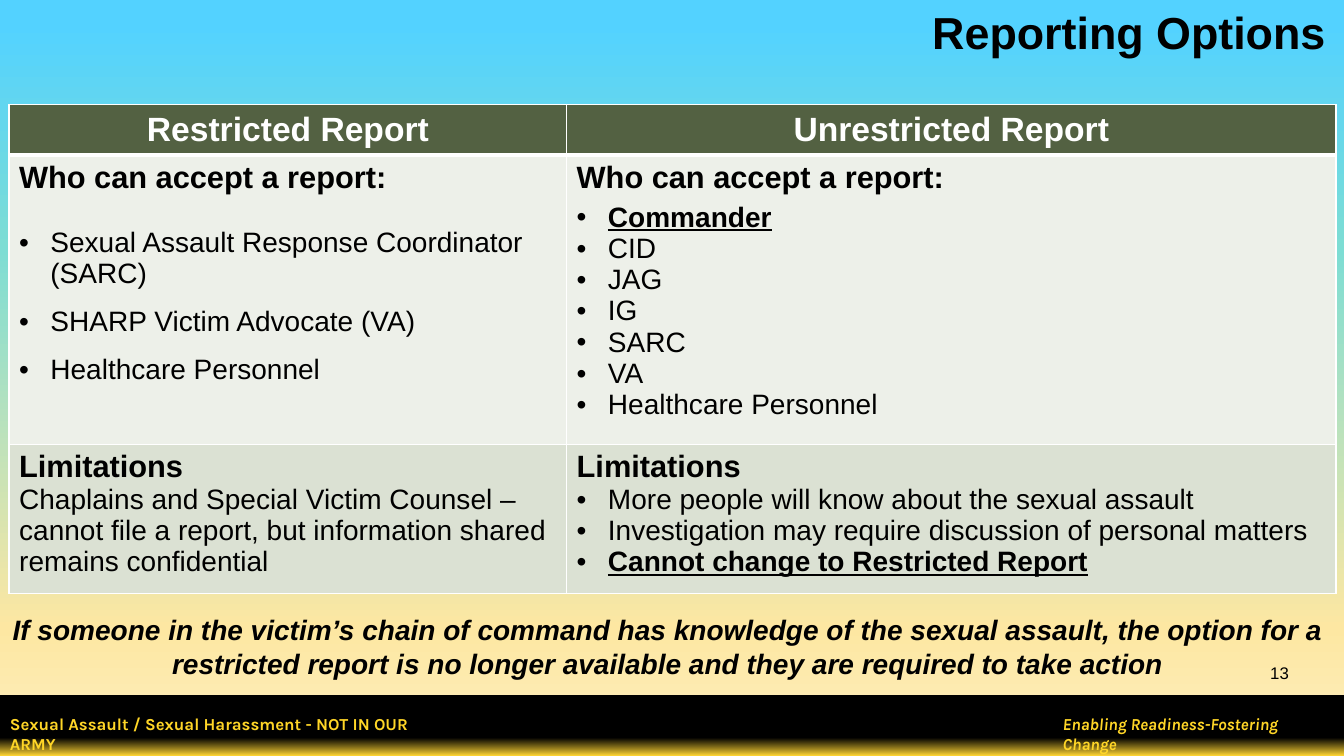
from lxml import etree
from pptx import Presentation
from pptx.dml.color import RGBColor
from pptx.enum.shapes import MSO_SHAPE
from pptx.enum.text import MSO_ANCHOR, PP_ALIGN
from pptx.oxml.ns import qn
from pptx.util import Inches, Pt

RECT = MSO_SHAPE.RECTANGLE
MIDDLE = MSO_ANCHOR.MIDDLE
LEFT, CENTER, RIGHT = PP_ALIGN.LEFT, PP_ALIGN.CENTER, PP_ALIGN.RIGHT

COLORS = {
    "black": "000000", "white": "FFFFFF", "gold": "FFD627", "glow": "FFD531",
    "olive": "536142", "pale": "EDF0E9", "sage": "DBE1D3",
    "sky": "53D2FF", "aqua": "7DDDD4", "sand": "FDE7A2", "cream": "FDEFC1",
}
SKY = [(0, "sky"), (3, "sky"), (33, "aqua"), (83, "sand"), (100, "cream")]
BAND = [(70, "black"), (100, "glow")]

HEADS = ["Restricted Report", "Unrestricted Report"]
WHO = "Who can accept a report:"
LIMITS = "Limitations"
BODY = [
    [
        {"head": WHO, "first": 23, "gap": 6, "items": [
            "Sexual Assault Response Coordinator (SARC)",
            "SHARP Victim Advocate (VA)",
            "Healthcare Personnel",
        ]},
        {"head": WHO, "first": 5, "items": [
            "Commander", "CID", "JAG", "IG", "SARC", "VA",
            "Healthcare Personnel",
        ]},
    ],
    [
        {"head": LIMITS, "plain": True, "items": [
            "Chaplains and Special Victim Counsel – cannot file a report, "
            "but information shared remains confidential",
        ]},
        {"head": LIMITS, "items": [
            "More people will know about the sexual assault",
            "Investigation may require discussion of personal matters",
            "Cannot change to Restricted Report",
        ]},
    ],
]
STRONG = {"Commander", "Cannot change to Restricted Report"}
FILLS = ["pale", "sage"]
COLS = [5.53, 7.63]
ROWS = [0.5, 2.87, 1.48]

LABELS = [
    {"text": "Enabling Readiness-Fostering Change", "at": (10.44, 7.03, 2.89, 0.3),
     "size": 12, "color": "gold", "face": "Karla", "bold": True, "slant": True},
    {"text": "Sexual Assault / Sexual Harassment - NOT IN OUR ARMY",
     "at": (0, 7.03, 4.24, 0.3),
     "size": 12, "color": "gold", "face": "Karla", "bold": True},
    {"text": "13", "at": (12.5, 6.53, 0.47, 0.3), "size": 12},
    {"text": "Reporting Options", "at": (7.72, 0.05, 5.53, 0.8), "top": 0,
     "size": 32, "bold": True, "align": RIGHT},
    {"text": "If someone in the victim’s chain of command has knowledge of the "
             "sexual assault, the option for a restricted report is no longer "
             "available and they are required to take action",
     "at": (0, 6.03, 13.25, 0.77),
     "size": 20, "bold": True, "slant": True, "align": CENTER},
]


def rgb(name):
    return RGBColor.from_string(COLORS[name])


def shade(fill, root, stops):
    fill.gradient()
    fill.gradient_angle = 270
    ramp = root.find(".//" + qn("a:gsLst"))
    for old in list(ramp):
        ramp.remove(old)
    for pos, name in stops:
        stop = etree.SubElement(ramp, qn("a:gs"), pos=str(pos * 1000))
        etree.SubElement(stop, qn("a:srgbClr"), val=COLORS[name])


def style(para, text, size, color="black", face="Arial", bold=False,
          slant=False, under=False, align=LEFT):
    para.text = text
    para.alignment = align
    font = para.font
    font.size, font.name = Pt(size), face
    font.bold, font.italic, font.underline = bold, slant, under
    font.color.rgb = rgb(color)


def label(slide, text, at, top=0.05, **look):
    frame = slide.shapes.add_textbox(*map(Inches, at)).text_frame
    frame.word_wrap = True
    frame.margin_top = frame.margin_bottom = Inches(top)
    style(frame.paragraphs[0], text, **look)


def bullet(para):
    props = para._p.get_or_add_pPr()
    props.set("marL", str(Inches(0.31)))
    props.set("indent", str(Inches(-0.31)))
    etree.SubElement(props, qn("a:buFont"), typeface="Arial")
    etree.SubElement(props, qn("a:buChar"), char="•")


def border(cell, row):
    props = cell._tc.get_or_add_tcPr()
    widths = {"L": 1, "R": 1, "T": 3 if row == 1 else 1, "B": 3 if row == 0 else 1}
    for spot, (side, width) in enumerate(widths.items()):
        line = etree.Element(qn("a:ln" + side), w=str(Pt(width)))
        solid = etree.SubElement(line, qn("a:solidFill"))
        etree.SubElement(solid, qn("a:srgbClr"), val=COLORS["white"])
        props.insert(spot, line)


def paint(cell, row, color):
    cell.fill.solid()
    cell.fill.fore_color.rgb = rgb(color)
    border(cell, row)


def write(cell, head, items, first=0, gap=0, plain=False):
    frame = cell.text_frame
    style(frame.paragraphs[0], head, 22, bold=True)
    for spot, item in enumerate(items):
        para = frame.add_paragraph()
        para.space_before = Pt(gap if spot else first)
        para.space_after = Pt(gap)
        if not plain:
            bullet(para)
        style(para, item, 20, bold=item in STRONG, under=item in STRONG)


def grid(slide):
    table = slide.shapes.add_table(
        len(ROWS), len(COLS), Inches(0.09), Inches(1.04),
        Inches(sum(COLS)), Inches(sum(ROWS))).table
    for col, width in zip(table.columns, COLS):
        col.width = Inches(width)
    for row, height in zip(table.rows, ROWS):
        row.height = Inches(height)
    for col, head in enumerate(HEADS):
        cell = table.cell(0, col)
        cell.vertical_anchor = MIDDLE
        paint(cell, 0, "olive")
        style(cell.text_frame.paragraphs[0], head, 24, "white",
              bold=True, align=CENTER)
    for row, (parts, color) in enumerate(zip(BODY, FILLS), 1):
        for col, part in enumerate(parts):
            cell = table.cell(row, col)
            paint(cell, row, color)
            write(cell, **part)


def main():
    deck = Presentation()
    deck.slide_width, deck.slide_height = Inches(13.33), Inches(7.5)
    slide = deck.slides.add_slide(deck.slide_layouts[6])
    shade(slide.background.fill, slide.element, SKY)
    band = slide.shapes.add_shape(
        RECT, 0, Inches(6.9), Inches(13.33), Inches(0.6))
    band.shadow.inherit = False
    band.line.fill.background()
    shade(band.fill, band.element, BAND)
    for item in LABELS:
        label(slide, **item)
    grid(slide)
    deck.save("out.pptx")


if __name__ == "__main__":
    main()
